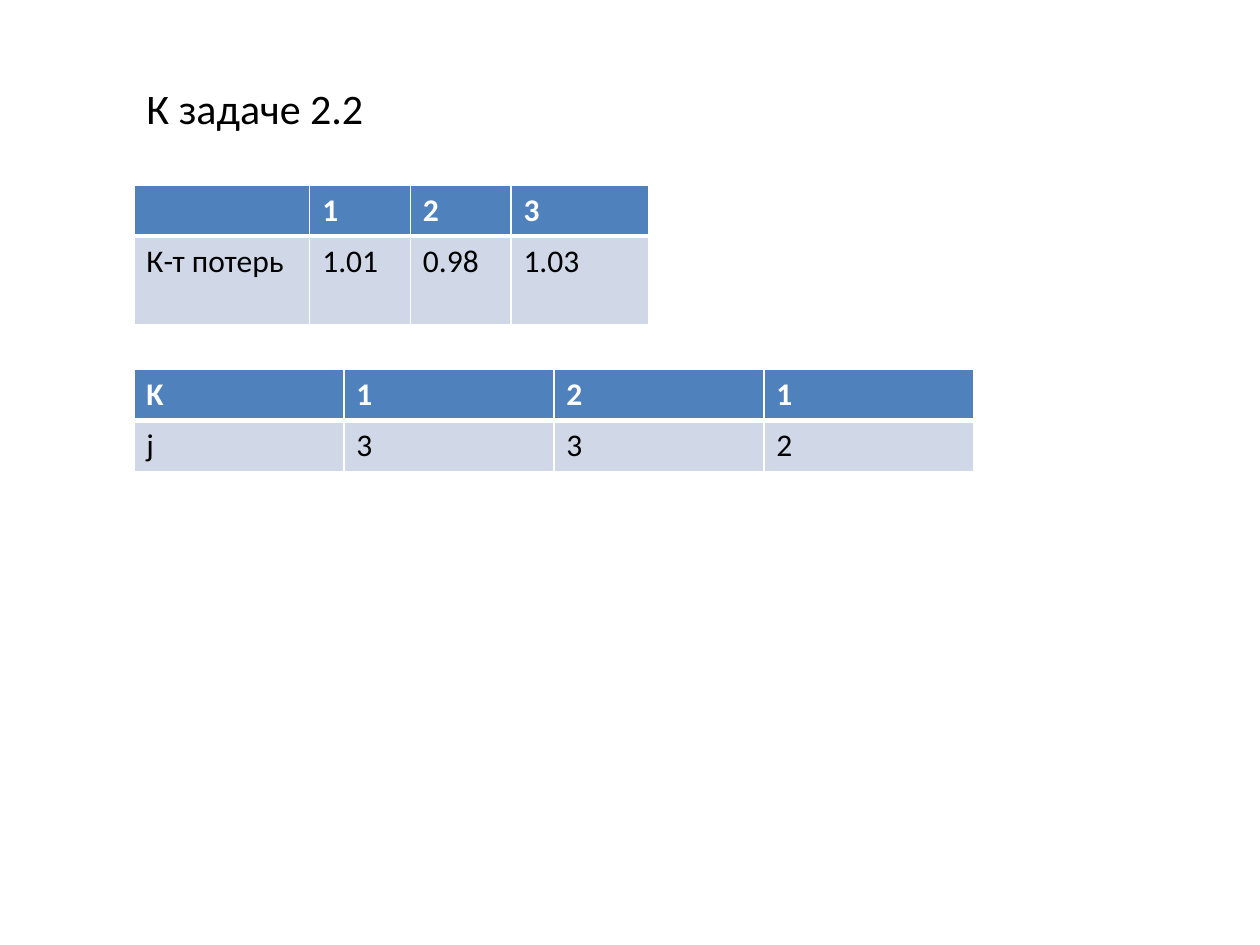
import dataclasses

import pptx
import pptx.dml.color
import pptx.enum.text
import pptx.oxml
import pptx.oxml.ns
import pptx.util

Pt = pptx.util.Pt
rgb = pptx.dml.color.RGBColor.from_string


@dataclasses.dataclass(frozen=True)
class Theme:
    font: str = "Calibri"
    title_size: int = 24
    body_size: int = 18
    ink: str = "000000"
    paper: str = "FFFFFF"
    header: str = "4F81BD"
    body: str = "D0D8E8"
    thin: int = 1
    thick: int = 3


def write(frame, text, *, font, size, color, bold=False):
    paragraph = frame.paragraphs[0]
    paragraph.alignment = pptx.enum.text.PP_ALIGN.LEFT
    run = paragraph.add_run()
    run.text = text
    run.font.name = font
    run.font.size = Pt(size)
    run.font.bold = bold
    run.font.color.rgb = rgb(color)


class SlideBuilder:
    """Adds styled elements to one slide, with lengths in points."""

    def __init__(self, slide, theme):
        self.slide = slide
        self.theme = theme

    def title(self, text, left, top, width, height):
        heading = self.slide.shapes.title
        heading.left, heading.top = Pt(left), Pt(top)
        heading.width, heading.height = Pt(width), Pt(height)
        frame = heading.text_frame
        frame.word_wrap = False
        frame.auto_size = pptx.enum.text.MSO_AUTO_SIZE.SHAPE_TO_FIT_TEXT
        frame.vertical_anchor = pptx.enum.text.MSO_ANCHOR.TOP
        write(frame, text, font=self.theme.font, size=self.theme.title_size,
              color=self.theme.ink)

    def borders(self, cell, top, bottom):
        thin = self.theme.thin
        properties = cell._tc.get_or_add_tcPr()
        for side, width in (("L", thin), ("R", thin), ("T", top), ("B", bottom)):
            properties.append(pptx.oxml.parse_xml(
                f'<a:ln{side} {pptx.oxml.ns.nsdecls("a")} w="{Pt(width)}">'
                f'<a:solidFill><a:srgbClr val="{self.theme.paper}"/></a:solidFill>'
                f'</a:ln{side}>'))

    def table(self, rows, left, top, widths, heights):
        theme = self.theme
        grid = self.slide.shapes.add_table(
            len(rows), len(widths), Pt(left), Pt(top),
            Pt(sum(widths)), Pt(sum(heights))).table
        for column, width in zip(grid.columns, widths):
            column.width = Pt(width)
        for index, (row, height, values) in enumerate(zip(grid.rows, heights, rows)):
            row.height = Pt(height)
            is_header = index == 0
            for cell, value in zip(row.cells, values):
                self.borders(cell, theme.thin if is_header else theme.thick,
                             theme.thick if is_header else theme.thin)
                cell.fill.solid()
                cell.fill.fore_color.rgb = rgb(theme.header if is_header else theme.body)
                if value:
                    write(cell.text_frame, value, font=theme.font,
                          size=theme.body_size, bold=is_header,
                          color=theme.paper if is_header else theme.ink)


def main():
    deck = pptx.Presentation()
    deck.slide_width, deck.slide_height = Pt(720), Pt(540)
    page = SlideBuilder(deck.slides.add_slide(deck.slide_layouts[5]), Theme())
    margin, row_height = 76.5, 29.2

    page.title("К задаче 2.2", margin, 43.4, 140, 36)
    page.table([["", "1", "2", "3"], ["К-т потерь", "1.01", "0.98", "1.03"]],
               margin, 105.7, [100.5, 57.5, 57.5, 79], [row_height, 50.4])
    page.table([["K", "1", "2", "1"], ["j", "3", "3", "2"]],
               margin, 211, [120] * 4, [row_height] * 2)
    deck.save("out.pptx")


if __name__ == "__main__":
    main()
